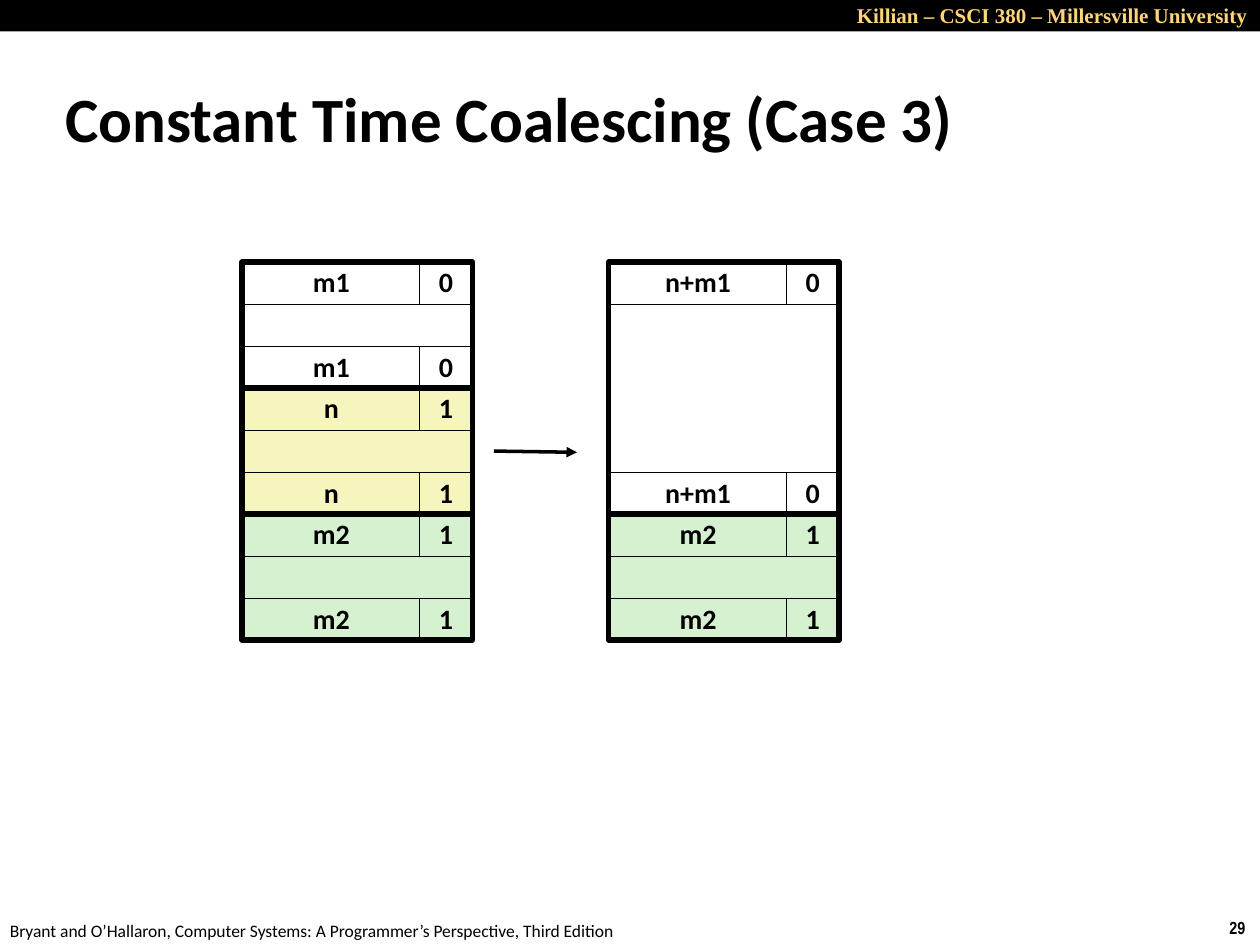
from pptx import Presentation
from pptx.dml.color import RGBColor
from pptx.enum.shapes import MSO_CONNECTOR as CONNECTOR, MSO_SHAPE as SHAPE
from pptx.enum.text import MSO_ANCHOR as ANCHOR, PP_ALIGN as ALIGN
from pptx.oxml.ns import qn
from pptx.util import Inches, Pt
from lxml.etree import SubElement

COLORS = {
    "ink": "000000",
    "header": "FFD579",
    "free": "FFFFFF",
    "freed": "F6F5BD",
    "used": "D5F1CF",
}
ROW = 1 / 3
SIZE_WIDTH, FLAG_WIDTH = 1.42, 0.42
BLOCK_WIDTH = 1.83
TOP = 2.08

# Each block: size label, allocated flag, colour, rows in its body
BEFORE = [("m1", "0", "free", 1), ("n", "1", "freed", 1), ("m2", "1", "used", 1)]
AFTER = [("n+m1", "0", "free", 4), ("m2", "1", "used", 1)]


def rgb(name):
    return RGBColor.from_string(COLORS[name])


def write(shape, text, size, font="Calibri", color="ink", bold=True,
          align=ALIGN.LEFT, anchor=ANCHOR.TOP, wrap=False, spacing=None):
    frame = shape.text_frame
    frame.word_wrap = wrap
    frame.vertical_anchor = anchor
    paragraph = frame.paragraphs[0]
    paragraph.alignment = align
    paragraph.line_spacing = spacing
    run = paragraph.add_run()
    run.text = text
    style = {"name": font, "size": Pt(size), "bold": bold}
    for key, value in style.items():
        setattr(run.font, key, value)
    run.font.color.rgb = rgb(color)


def add_label(slide, box, text, size, **style):
    label = slide.shapes.add_textbox(*map(Inches, box))
    write(label, text, size, **style)


def add_rect(slide, box, fill=None, line=None):
    rect = slide.shapes.add_shape(SHAPE.RECTANGLE, *map(Inches, box))
    rect.shadow.inherit = False
    if fill:
        rect.fill.solid()
        rect.fill.fore_color.rgb = rgb(fill)
    else:
        rect.fill.background()
    if line:
        rect.line.color.rgb = rgb("ink")
        rect.line.width = Pt(line)
    else:
        rect.line.fill.background()
    return rect


def add_tag(slide, left, top, size, flag, fill):
    """Boundary tag: size cell followed by the allocated flag."""
    cells = [(left, SIZE_WIDTH, size),
             (left + BLOCK_WIDTH - FLAG_WIDTH, FLAG_WIDTH, flag)]
    for x, width, text in cells:
        cell = add_rect(slide, (x, top, width, ROW), fill, 0.25)
        write(cell, text, 16, align=ALIGN.CENTER, anchor=ANCHOR.MIDDLE, spacing=0.98)


def add_heap(slide, left, top, blocks):
    """Stack of blocks, each a header, a body and a footer in a thick frame."""
    for size, flag, fill, body_rows in blocks:
        body = body_rows * ROW
        height = body + 2 * ROW
        add_tag(slide, left, top, size, flag, fill)
        add_rect(slide, (left, top + ROW, BLOCK_WIDTH, body), fill, 0.25)
        add_tag(slide, left, top + ROW + body, size, flag, fill)
        add_rect(slide, (left, top, BLOCK_WIDTH, height), line=3)
        top += height


def add_arrow(slide, start, end):
    arrow = slide.shapes.add_connector(CONNECTOR.STRAIGHT, *map(Inches, start + end))
    arrow.line.color.rgb = rgb("ink")
    arrow.line.width = Pt(2)
    SubElement(arrow.line._get_or_add_ln(), qn("a:tailEnd"), type="triangle")
    SubElement(arrow._element.spPr, qn("a:effectLst"))


def add_header(slide, box):
    left, top, width, height = box
    add_rect(slide, box, "ink")
    add_label(slide, (left + width - 3.92, top - 0.03, 3.92, 0.3),
              "Killian – CSCI 380 – Millersville University", 12,
              font="Times New Roman", color="header", align=ALIGN.RIGHT, wrap=True)


def add_footer(slide, box):
    left, top, width, height = box
    add_label(slide, (left - 0.02, top + 0.02, 5.08, height),
              "Bryant and O’Hallaron, Computer Systems: "
              "A Programmer’s Perspective, Third Edition", 10, bold=False)
    add_label(slide, (left + width - 0.34, top, 0.34, height), "29", 10,
              font="Arial Narrow")


def main():
    deck = Presentation()
    deck.slide_width, deck.slide_height = Inches(10), Inches(7.5)
    slide = deck.slides.add_slide(deck.slide_layouts[6])

    # Header, footer and title
    add_header(slide, (0, 0, 10, 0.25))
    add_footer(slide, (0, 7.23, 10, 0.27))
    add_label(slide, (0.42, 0.62, 9.17, 0.63), "Constant Time Coalescing (Case 3)",
              36, anchor=ANCHOR.MIDDLE, wrap=True)

    # Heap before and after freeing block n
    add_heap(slide, 1.92, TOP, BEFORE)
    add_arrow(slide, (3.92, 3.58), (4.58, 3.59))
    add_heap(slide, 4.83, TOP, AFTER)

    deck.save("out.pptx")


if __name__ == "__main__":
    main()
